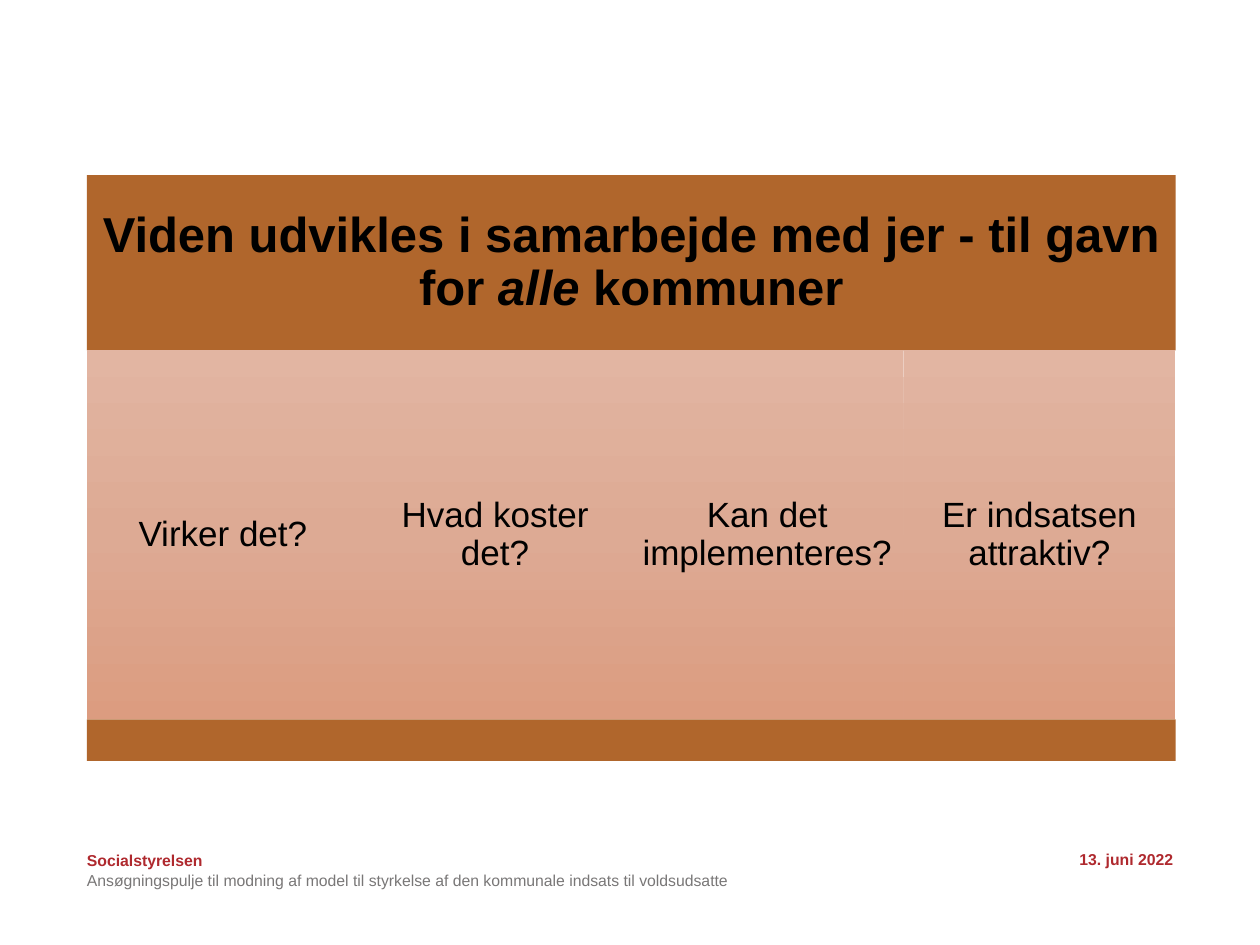
from copy import deepcopy
from dataclasses import dataclass

from pptx import Presentation
from pptx import util as u
from pptx.dml.color import RGBColor
from pptx.enum import shapes, text
from pptx.oxml.ns import qn


@dataclass(frozen=True)
class Theme:
    font: str = "Arial"
    band: str = "B0662C"
    column: tuple = ((0, "E2B5A2"), (0.5, "DDAA94"), (1, "DC9C80"))
    ink: str = "000000"
    accent: str = "AF292E"
    muted: str = "797777"
    heading: int = 28
    body: int = 20
    footer: int = 9


def write(tf, runs, *, size, color, font, bold=False, inset=0,
          align=text.PP_ALIGN.LEFT, anchor=text.MSO_ANCHOR.MIDDLE, spacing=None):
    """Fill a text frame with one paragraph; runs are (words, italic) pairs or a string."""
    tf.word_wrap = True
    tf.vertical_anchor = anchor
    tf.margin_left = tf.margin_right = tf.margin_top = tf.margin_bottom = u.Inches(inset)
    p = tf.paragraphs[0]
    p.alignment = align
    p.line_spacing = spacing
    for words, italic in [(runs, False)] if isinstance(runs, str) else runs:
        r = p.add_run()
        r.text = words
        r.font.name = font
        r.font.size = u.Pt(size)
        r.font.bold = bold
        r.font.italic = italic
        r.font.color.rgb = RGBColor.from_string(color)


class SlideBuilder:
    def __init__(self, slide, theme):
        self.slide = slide
        self.theme = theme

    def _rect(self, box):
        sp = self.slide.shapes.add_shape(shapes.MSO_SHAPE.RECTANGLE, *map(u.Inches, box))
        sp.shadow.inherit = False
        sp.line.fill.background()
        return sp

    def band(self, box, runs=None):
        sp = self._rect(box)
        sp.fill.solid()
        sp.fill.fore_color.rgb = RGBColor.from_string(self.theme.band)
        if runs:
            write(sp.text_frame, runs, size=self.theme.heading, color=self.theme.ink,
                  font=self.theme.font, bold=True, inset=0.12,
                  align=text.PP_ALIGN.CENTER, spacing=0.9)

    def column(self, box, words):
        sp = self._rect(box)
        sp.fill.gradient()
        sp.fill.gradient_angle = 270
        stops = sp._element.spPr.find(qn("a:gradFill")).find(qn("a:gsLst"))
        stops.insert(1, deepcopy(stops[0]))
        for stop, (position, color) in zip(sp.fill.gradient_stops, self.theme.column):
            stop.position = position
            stop.color.rgb = RGBColor.from_string(color)
        write(sp.text_frame, words, size=self.theme.body, color=self.theme.ink,
              font=self.theme.font, inset=0.08, align=text.PP_ALIGN.CENTER, spacing=0.9)

    def footer(self, box, words, color, **style):
        tb = self.slide.shapes.add_textbox(*map(u.Inches, box))
        write(tb.text_frame, words, size=self.theme.footer, color=color,
              font=self.theme.font, **style)


def main():
    prs = Presentation()
    prs.slide_width, prs.slide_height = u.Inches(10), u.Inches(7.5)
    theme = Theme()
    page = SlideBuilder(prs.slides.add_slide(prs.slide_layouts[6]), theme)

    left, top, width = 0.69, 1.39, 8.64
    heading_h, column_h, base_h = 1.39, 2.93, 0.33
    questions = ["Virker det?", "Hvad koster det?",
                 "Kan det implementeres?", "Er indsatsen attraktiv?"]
    column_w = width / len(questions)
    column_top = top + heading_h

    page.band((left, top, width, heading_h),
              [("Viden udvikles i samarbejde med jer - til gavn for ", False),
               ("alle", True), (" kommuner", False)])
    for i, question in enumerate(questions):
        page.column((left + i * column_w, column_top, column_w, column_h), question)
    page.band((left, column_top + column_h, width, base_h))

    page.footer((left, 6.75, 1.18, 0.15), "Socialstyrelsen", theme.accent,
                bold=True, anchor=text.MSO_ANCHOR.TOP)
    page.footer((7.06, 6.62, 2.25, 0.4), "13. juni 2022", theme.accent,
                bold=True, align=text.PP_ALIGN.RIGHT)
    page.footer((left, 6.86, 5.21, 0.2),
                "Ansøgningspulje til modning af model til styrkelse "
                "af den kommunale indsats til voldsudsatte",
                theme.muted, anchor=text.MSO_ANCHOR.BOTTOM)
    prs.save("out.pptx")


if __name__ == "__main__":
    main()
